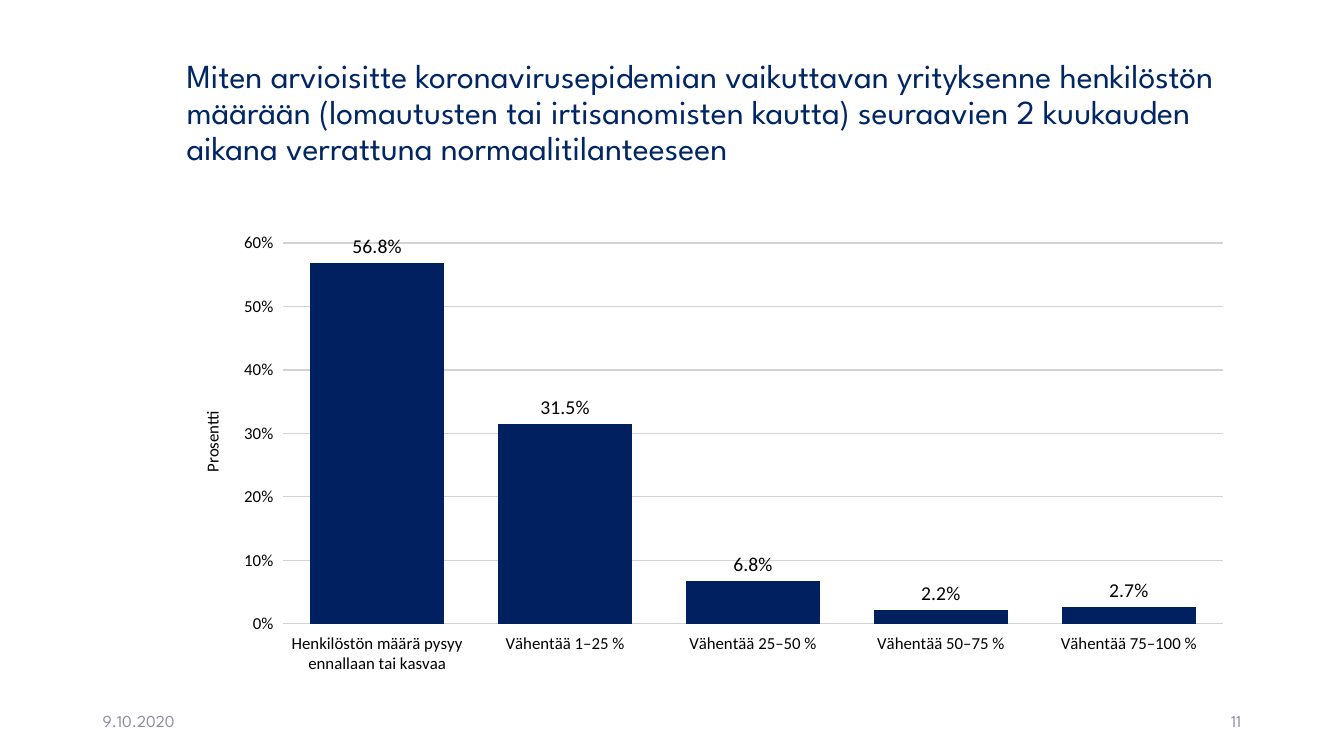
import pptx
import pptx.util
import pptx.chart.data
import pptx.dml.color
import pptx.enum.chart
import pptx.enum.text
import pptx.oxml

TITLE = ("Miten arvioisitte koronavirusepidemian vaikuttavan yrityksenne henkilöstön "
         "määrään (lomautusten tai irtisanomisten kautta) seuraavien 2 kuukauden "
         "aikana verrattuna normaalitilanteeseen")
DATE, PAGE_NUMBER = "9.10.2020", "11"
AXIS_TITLE = "Prosentti"
ANSWERS = {
    "Henkilöstön määrä pysyy ennallaan tai kasvaa": 0.568,
    "Vähentää 1–25 %": 0.315,
    "Vähentää 25–50 %": 0.068,
    "Vähentää 50–75 %": 0.022,
    "Vähentää 75–100 %": 0.027,
}

WIDTH, HEIGHT = 13.33, 7.5
LEFT, CONTENT_WIDTH = 1.75, 10.59
FOOTER_MARGIN, FOOTER_TOP, FOOTER_WIDTH, FOOTER_HEIGHT = 0.92, 6.95, 3, 0.4
HEADING_FONT, CHART_FONT = "League Spartan", "Calibri"
NAVY, BAR, GREY, GRID, BLACK = "002663", "002060", "8C8E9F", "D3D3D3", "000000"
ALIGN = pptx.enum.text.PP_ALIGN


def color(value):
    return pptx.dml.color.RGBColor.from_string(value)


def inches(*lengths):
    return [pptx.util.Inches(length) for length in lengths]


def style_font(font, name=CHART_FONT, size=12, ink=BLACK):
    font.name = name
    font.size = pptx.util.Pt(size)
    font.bold = False
    font.color.rgb = color(ink)


def write(frame, text, align=ALIGN.LEFT, spacing=1.0, **style):
    frame.word_wrap = True
    frame.auto_size = pptx.enum.text.MSO_AUTO_SIZE.NONE
    frame.vertical_anchor = pptx.enum.text.MSO_ANCHOR.MIDDLE
    para = frame.paragraphs[0]
    para.alignment = align
    para.line_spacing = spacing
    span = para.add_run()
    span.text = text
    style_font(span.font, **style)


def set_layout(element, target=None, **shares):
    for old in element.xpath("./c:layout"):
        element.remove(old)
    parts = f'<c:layoutTarget val="{target}"/>' if target else ""
    parts += "".join(f'<c:{key}Mode val="edge"/>' for key in "xy")
    parts += "".join(f'<c:{key} val="{share}"/>' for key, share in shares.items())
    layout = pptx.oxml.parse_xml(
        '<c:layout xmlns:c="http://schemas.openxmlformats.org/drawingml/2006/chart">'
        f"<c:manualLayout>{parts}</c:manualLayout></c:layout>")
    element.insert(len(element.xpath("./c:tx")), layout)


def add_title(page):
    title = page.shapes.title
    title.left, title.top, title.width, title.height = inches(LEFT, 0.4, CONTENT_WIDTH, 1.45)
    write(title.text_frame, TITLE, spacing=0.9, name=HEADING_FONT, size=24, ink=NAVY)


def add_footer(page):
    right = WIDTH - FOOTER_MARGIN - FOOTER_WIDTH
    for left, text, align in ((FOOTER_MARGIN, DATE, ALIGN.LEFT),
                              (right, PAGE_NUMBER, ALIGN.RIGHT)):
        box = page.shapes.add_textbox(*inches(left, FOOTER_TOP, FOOTER_WIDTH, FOOTER_HEIGHT))
        write(box.text_frame, text, align=align, name=HEADING_FONT, ink=GREY)


def add_answer_chart(page):
    data = pptx.chart.data.CategoryChartData(number_format="0.0%")
    data.categories = list(ANSWERS)
    data.add_series("Series 1", list(ANSWERS.values()))
    chart = page.shapes.add_chart(
        pptx.enum.chart.XL_CHART_TYPE.COLUMN_CLUSTERED,
        *inches(LEFT, 2, CONTENT_WIDTH, 4.76), data).chart
    chart.has_legend = False
    chart.has_title = False
    style_font(chart.font, size=11)

    plot = chart.plots[0]
    plot.gap_width = 40
    plot.vary_by_categories = False
    fill = plot.series[0].format.fill
    fill.solid()
    fill.fore_color.rgb = color(BAR)
    plot.has_data_labels = True
    labels = plot.data_labels
    labels.show_value = True
    labels.number_format = "0.0%"
    labels.number_format_is_linked = False
    labels.position = pptx.enum.chart.XL_LABEL_POSITION.OUTSIDE_END
    style_font(labels.font, size=14)

    for axis in (chart.category_axis, chart.value_axis):
        axis.major_tick_mark = pptx.enum.chart.XL_TICK_MARK.OUTSIDE
        axis.format.line.fill.background()
        style_font(axis.tick_labels.font)
    scale = chart.value_axis
    scale.minimum_scale, scale.maximum_scale, scale.major_unit = 0, 0.65, 0.1
    scale.tick_labels.number_format = "0%"
    scale.tick_labels.number_format_is_linked = False
    scale.has_major_gridlines = True
    line = scale.major_gridlines.format.line
    line.color.rgb = color(GRID)
    line.width = pptx.util.Pt(1)

    frame = scale.axis_title.text_frame
    span = frame.paragraphs[0].add_run()
    span.text = AXIS_TITLE
    style_font(span.font)
    body = scale.axis_title._element.xpath(".//a:bodyPr")[0]
    body.set("rot", "-5400000")
    body.set("vert", "horz")
    set_layout(scale.axis_title._element, x=0.02, y=0.43)
    set_layout(chart._chartSpace.xpath(".//c:plotArea")[0], "inner",
               x=0.1, y=0.02, w=0.88, h=0.86)


def main():
    deck = pptx.Presentation()
    deck.slide_width, deck.slide_height = inches(WIDTH, HEIGHT)
    page = deck.slides.add_slide(deck.slide_layouts[5])
    add_title(page)
    add_footer(page)
    add_answer_chart(page)
    deck.save("out.pptx")


if __name__ == "__main__":
    main()
